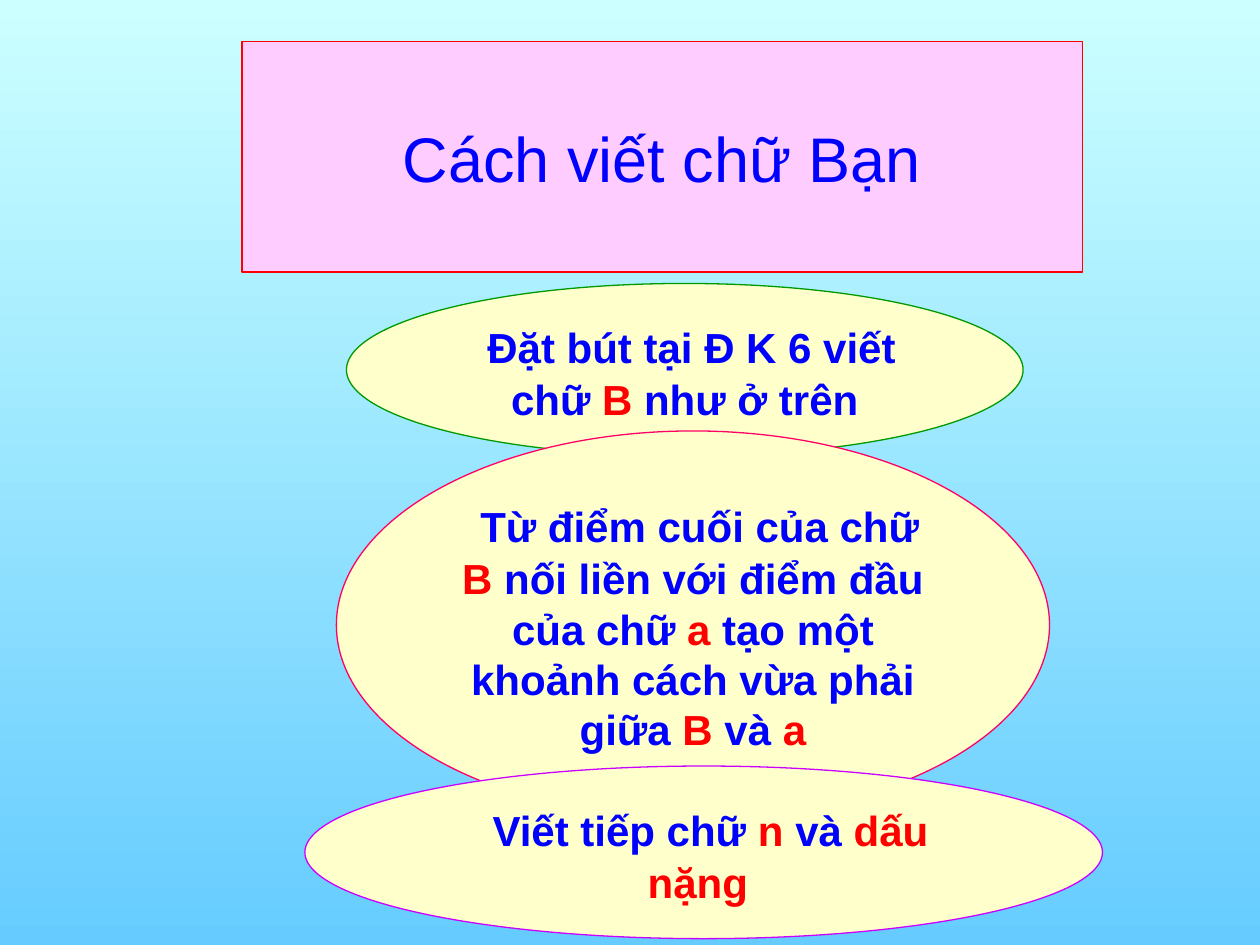
from pptx import Presentation
from pptx.dml.color import RGBColor
from pptx.enum.shapes import MSO_SHAPE as Shape
from pptx.enum.text import MSO_ANCHOR as Anchor, PP_ALIGN as Align
from pptx.util import Inches, Pt

BLUE, RED = "0000FF", "FF0000"
CREAM, PINK = "FFFFCC", "FFCCFF"

# Each step: box, outline colour, runs of text
STEPS = [
    ((2.75, 2.25, 5.37, 1.37), "009900",
     [("Đặt bút tại Đ K 6 viết chữ ", BLUE), ("B", RED),
      (" như ở trên", BLUE)]),
    ((2.67, 3.42, 5.66, 3.08), "FF0066",
     [("Từ điểm cuối của chữ ", BLUE), ("B ", RED),
      ("nối liền với điểm đầu của chữ", BLUE), (" a ", RED),
      ("tạo một khoảnh cách vừa phải giữa ", BLUE), ("B", RED),
      (" và", BLUE), (" a", RED)]),
    ((2.42, 6.08, 6.33, 1.37), "CC00FF",
     [("Viết tiếp chữ ", BLUE), ("n", RED), (" và ", BLUE),
      ("dấu nặng ", RED)]),
]


def color(code):
    return RGBColor.from_string(code)


def add_back(slide):
    fill = slide.background.fill
    fill.gradient()
    fill.gradient_angle = 270
    for stop, code in zip(fill.gradient_stops, ("CCFFFF", "66CCFF")):
        stop.color.rgb = color(code)


def add_box(slide, kind, box, fill, line, anchor):
    shape = slide.shapes.add_shape(kind, *map(Inches, box))
    shape.shadow.inherit = False
    shape.fill.solid()
    shape.fill.fore_color.rgb = color(fill)
    shape.line.color.rgb = color(line)
    shape.line.width = Pt(0.75)
    shape.text_frame.word_wrap = True
    shape.text_frame.vertical_anchor = anchor
    para = shape.text_frame.paragraphs[0]
    para.alignment = Align.CENTER
    return para


def add_run(para, text, size, code, bold=False):
    run = para.add_run()
    run.text = text
    run.font.name = "Arial"
    run.font.size = Pt(size)
    run.font.bold = bold
    run.font.color.rgb = color(code)


def add_title(slide):
    para = add_box(slide, Shape.RECTANGLE, (1.92, 0.33, 6.67, 1.83),
                   PINK, RED, Anchor.MIDDLE)
    add_run(para, "Cách viết chữ Bạn", 36, BLUE)


def add_step(slide, box, line, runs):
    para = add_box(slide, Shape.OVAL, box, CREAM, line, Anchor.TOP)
    para.space_before = Pt(3)
    add_run(para, " ", 28, BLUE)
    for text, code in runs:
        add_run(para, text, 24, code, bold=True)


def main():
    deck = Presentation()
    deck.slide_width, deck.slide_height = Inches(10), Inches(7.5)
    slide = deck.slides.add_slide(deck.slide_layouts[6])
    add_back(slide)
    add_title(slide)
    # Later steps overlap the earlier ones
    for step in STEPS:
        add_step(slide, *step)
    deck.save("out.pptx")


if __name__ == "__main__":
    main()
